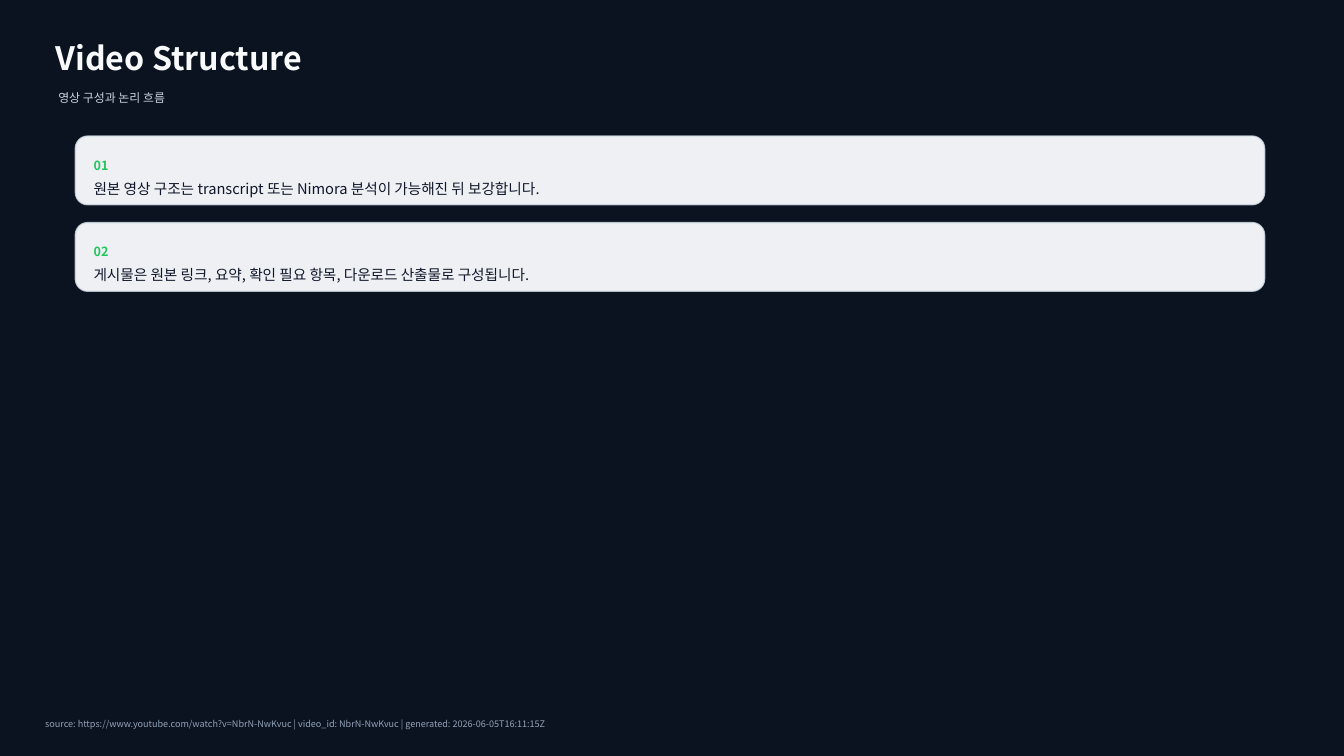
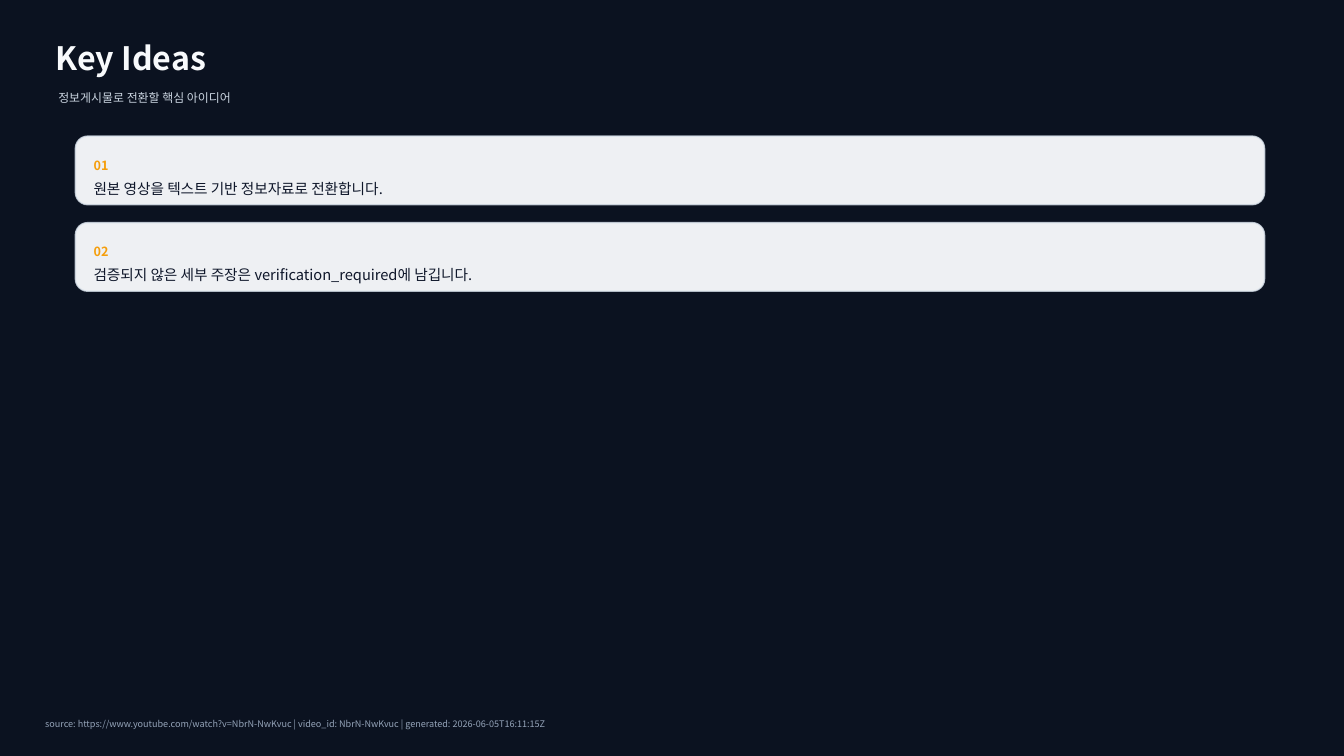
from lxml.etree import SubElement
from pptx import Presentation
from pptx.dml.color import RGBColor
from pptx.enum.shapes import MSO_SHAPE
from pptx.enum.text import MSO_ANCHOR
from pptx.oxml.ns import qn
from pptx.util import Cm, Pt

# Shared style
FONT = "Noto Sans CJK KR"
BACKGROUND = "0B1220"
TITLE, SUBTITLE, FOOTER = "F8FAFC", "CBD5E1", "94A3B8"
CARD_FILL, CARD_LINE, CARD_TEXT = "F8FAFC", "D7E0EA", "0F172A"
GREEN, AMBER = "22C55E", "F59E0B"

# Card column, in cm
CARD_LEFT, CARD_TOP, CARD_WIDTH, CARD_HEIGHT = 1.9, 3.43, 29.97, 1.73
CARD_GAP = 0.45
CARD_PAD = 0.46

SOURCE = ("source: https://www.youtube.com/watch?v=NbrN-NwKvuc"
          " | video_id: NbrN-NwKvuc | generated: 2026-06-05T16:11:15Z")

SLIDES = [
    ("Video Structure", "영상 구성과 논리 흐름", GREEN, [
        "원본 영상 구조는 transcript 또는 Nimora 분석이 가능해진 뒤 보강합니다.",
        "게시물은 원본 링크, 요약, 확인 필요 항목, 다운로드 산출물로 구성됩니다.",
    ]),
    ("Key Ideas", "정보게시물로 전환할 핵심 아이디어", AMBER, [
        "원본 영상을 텍스트 기반 정보자료로 전환합니다.",
        "검증되지 않은 세부 주장은 verification_required에 남깁니다.",
    ]),
]


def rgb(value):
    return RGBColor.from_string(value)


def set_opacity(fill, percent):
    color = fill.fore_color._xFill.find(qn("a:srgbClr"))
    SubElement(color, qn("a:alpha"), val=str(percent * 1000))


def add_text(s, text, left, top, width, height, size, color, bold=False):
    box = s.shapes.add_textbox(Cm(left), Cm(top), Cm(width), Cm(height))
    tf = box.text_frame
    tf.word_wrap = True
    tf.vertical_anchor = MSO_ANCHOR.MIDDLE
    tf.margin_left = tf.margin_right = tf.margin_top = tf.margin_bottom = 0
    r = tf.paragraphs[0].add_run()
    r.text = text
    r.font.name = FONT
    r.font.size = Pt(size)
    r.font.bold = bold
    r.font.color.rgb = rgb(color)
    # Hangul takes the East Asian typeface
    SubElement(r.font._element, qn("a:ea"), typeface=FONT)


def add_card(s, index, text, accent):
    top = CARD_TOP + index * (CARD_HEIGHT + CARD_GAP)
    sp = s.shapes.add_shape(MSO_SHAPE.ROUNDED_RECTANGLE, Cm(CARD_LEFT),
                            Cm(top), Cm(CARD_WIDTH), Cm(CARD_HEIGHT))
    sp.adjustments[0] = 0.18
    sp.shadow.inherit = False
    sp.fill.solid()
    sp.fill.fore_color.rgb = rgb(CARD_FILL)
    set_opacity(sp.fill, 96)
    sp.line.width = Pt(1)
    sp.line.color.rgb = rgb(CARD_LINE)
    set_opacity(sp.line.fill, 80)

    # Number above its statement
    left, width = CARD_LEFT + CARD_PAD, CARD_WIDTH - 2 * CARD_PAD
    add_text(s, f"{index + 1:02d}", left, top + 0.41, width, 0.64, 9, accent, True)
    add_text(s, text, left, top + 1.27, width, 0.1, 10.5, CARD_TEXT)


def add_slide(prs, title, subtitle, accent, statements):
    s = prs.slides.add_slide(prs.slide_layouts[6])
    s.background.fill.solid()
    s.background.fill.fore_color.rgb = rgb(BACKGROUND)
    # Heading
    add_text(s, title, 1.4, 0.89, 30.48, 1.14, 23, TITLE, True)
    add_text(s, subtitle, 1.47, 2.11, 29.21, 0.71, 8.5, SUBTITLE)
    # Cards
    for index, text in enumerate(statements):
        add_card(s, index, text, accent)
    # Footer
    add_text(s, SOURCE, 1.14, 17.91, 31.5, 0.64, 6.5, FOOTER)


def main():
    prs = Presentation()
    prs.slide_width, prs.slide_height = Cm(33.87), Cm(19.05)
    for content in SLIDES:
        add_slide(prs, *content)
    prs.save("out.pptx")


if __name__ == "__main__":
    main()
